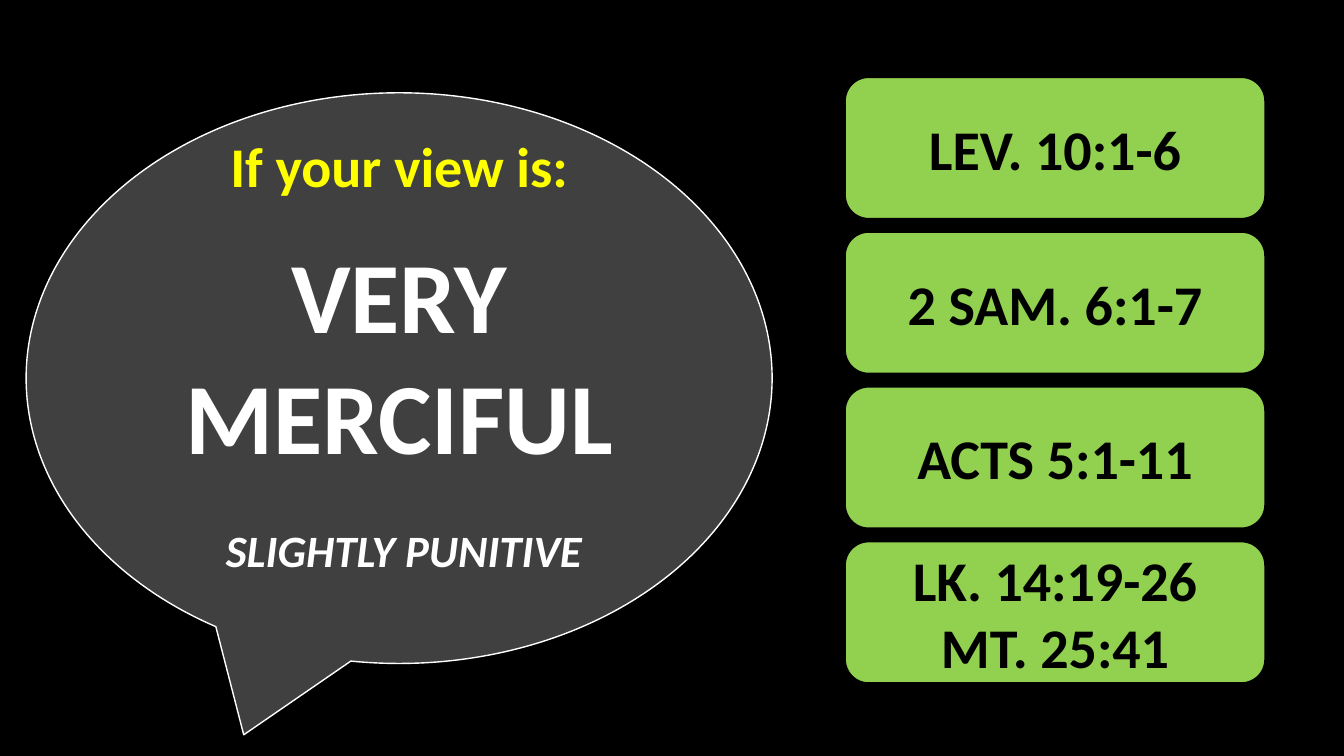
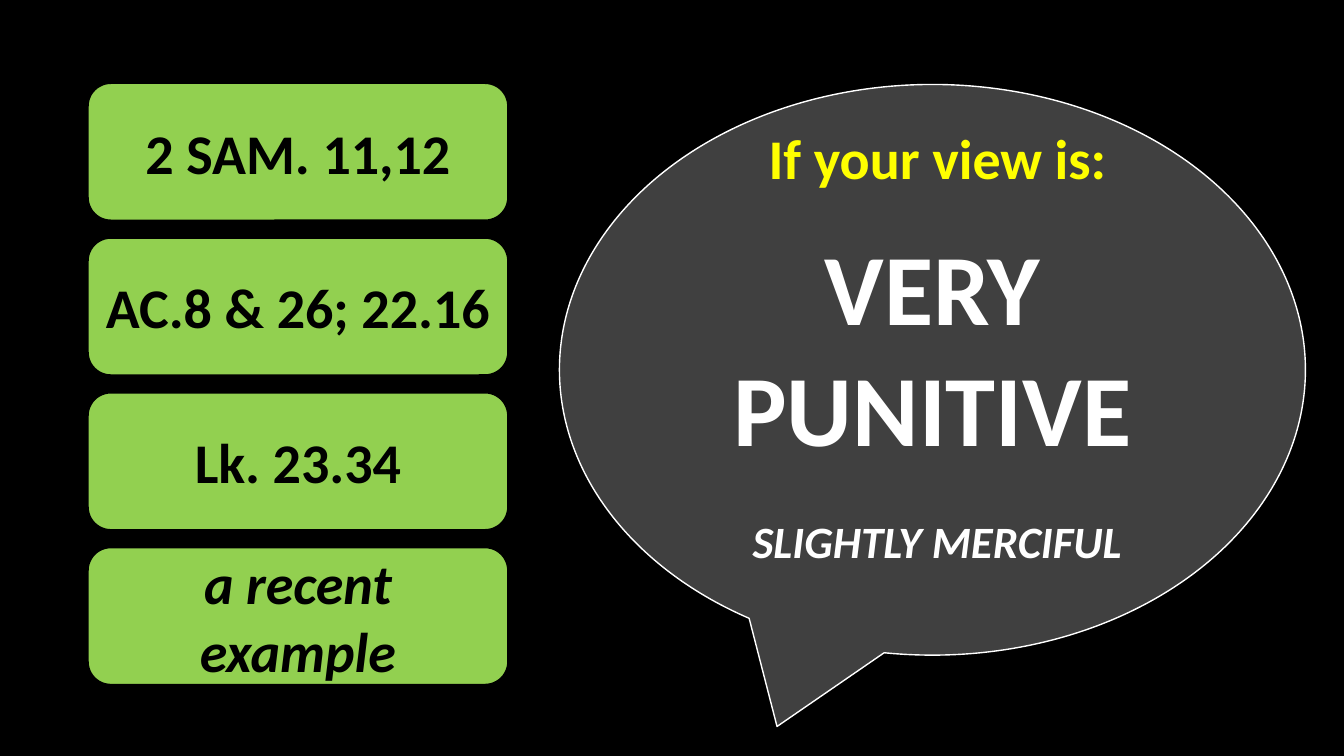
from dataclasses import dataclass

from pptx import Presentation
from pptx.dml.color import RGBColor
from pptx.enum.shapes import MSO_SHAPE
from pptx.enum.text import MSO_ANCHOR, PP_ALIGN
from pptx.util import Cm, Pt

CALLOUT = MSO_SHAPE.OVAL_CALLOUT
CARD = MSO_SHAPE.ROUNDED_RECTANGLE
MIDDLE = MSO_ANCHOR.MIDDLE
CENTER = PP_ALIGN.CENTER

COLORS = {
    "black": "000000",
    "bubble": "404040",
    "white": "FFFFFF",
    "green": "92D050",
    "yellow": "FFFF00",
}
FONT = "Calibri"

# Shared sizes in centimetres
CARD_W, CARD_PITCH = 10.58, 3.9
BUBBLE_W, BUBBLE_H = 18.8, 14.38
BUBBLE_BOTTOM_INSET = 1.34


@dataclass(frozen=True)
class Line:
    text: str
    size: int = 40
    color: str = "black"
    italic: bool = False
    before: int = 0
    indent: float = 0


@dataclass(frozen=True)
class Box:
    left: float
    top: float
    width: float
    height: float


@dataclass(frozen=True)
class View:
    main: str
    minor: str
    bubble_left: float
    bubble_top: float
    title_indent: float
    cards_left: float
    cards_top: float
    card_height: float
    cards: tuple[tuple[Line, ...], ...]


VIEWS = (
    View("VERY MERCIFUL", "SLIGHTLY PUNITIVE", 0.66, 2.34, 0,
         21.3, 1.95, 3.56,
         ((Line("LEV. 10:1-6"),),
          (Line("2 SAM. 6:1-7"),),
          (Line("ACTS 5:1-11"),),
          (Line("LK. 14:19-26"), Line("MT. 25:41")))),
    View("VERY PUNITIVE", "SLIGHTLY MERCIFUL", 14.1, 2.13, 0.25,
         2.22, 2.1, 3.45,
         ((Line("2 SAM. 11,12"),),
          (Line("AC.8 & 26; 22.16"),),
          (Line("Lk. 23.34"),),
          (Line("a recent example", italic=True),))),
)


def rgb(name: str) -> RGBColor:
    return RGBColor.from_string(COLORS[name])


def add_box(slide, kind, box: Box, fill: str, line: str, lines: tuple[Line, ...]):
    """Draw a filled shape with centred bold lines of text."""
    sp = slide.shapes.add_shape(kind, Cm(box.left), Cm(box.top),
                                Cm(box.width), Cm(box.height))
    sp.shadow.inherit = False
    sp.fill.solid()
    sp.fill.fore_color.rgb = rgb(fill)
    sp.line.color.rgb = rgb(line)
    sp.line.width = Pt(1)

    tf = sp.text_frame
    tf.word_wrap = True
    tf.vertical_anchor = MIDDLE
    for i, item in enumerate(lines):
        p = tf.add_paragraph() if i else tf.paragraphs[0]
        p.alignment = CENTER
        p.space_before = Pt(item.before)
        if item.indent:
            p._p.get_or_add_pPr().set("marL", str(Cm(item.indent)))
        r = p.add_run()
        r.text = item.text
        r.font.color.rgb = rgb(item.color)
        font_format = {"name": FONT, "size": Pt(item.size),
                       "bold": True, "italic": item.italic}
        for name, value in font_format.items():
            setattr(r.font, name, value)
    return sp


def add_view(prs, view: View) -> None:
    slide = prs.slides.add_slide(prs.slide_layouts[6])

    # Speech bubble
    bubble = Box(view.bubble_left, view.bubble_top, BUBBLE_W, BUBBLE_H)
    sp = add_box(slide, CALLOUT, bubble, "bubble", "white", (
        Line("If your view is:", color="yellow", indent=view.title_indent),
        Line(view.main, 72, "white", before=24),
        Line(view.minor, 32, "white", italic=True, before=34, indent=0.25),
    ))
    sp.text_frame.margin_bottom = Cm(BUBBLE_BOTTOM_INSET)

    # Column of passages
    for i, lines in enumerate(view.cards):
        box = Box(view.cards_left, view.cards_top + i * CARD_PITCH,
                  CARD_W, view.card_height)
        add_box(slide, CARD, box, "green", "black", lines)


def main() -> None:
    prs = Presentation()
    prs.slide_width, prs.slide_height = Cm(33.87), Cm(19.05)

    # Black background for every slide
    fill = prs.slide_master.background.fill
    fill.solid()
    fill.fore_color.rgb = rgb("black")

    for view in VIEWS:
        add_view(prs, view)
    prs.save("out.pptx")


if __name__ == "__main__":
    main()
